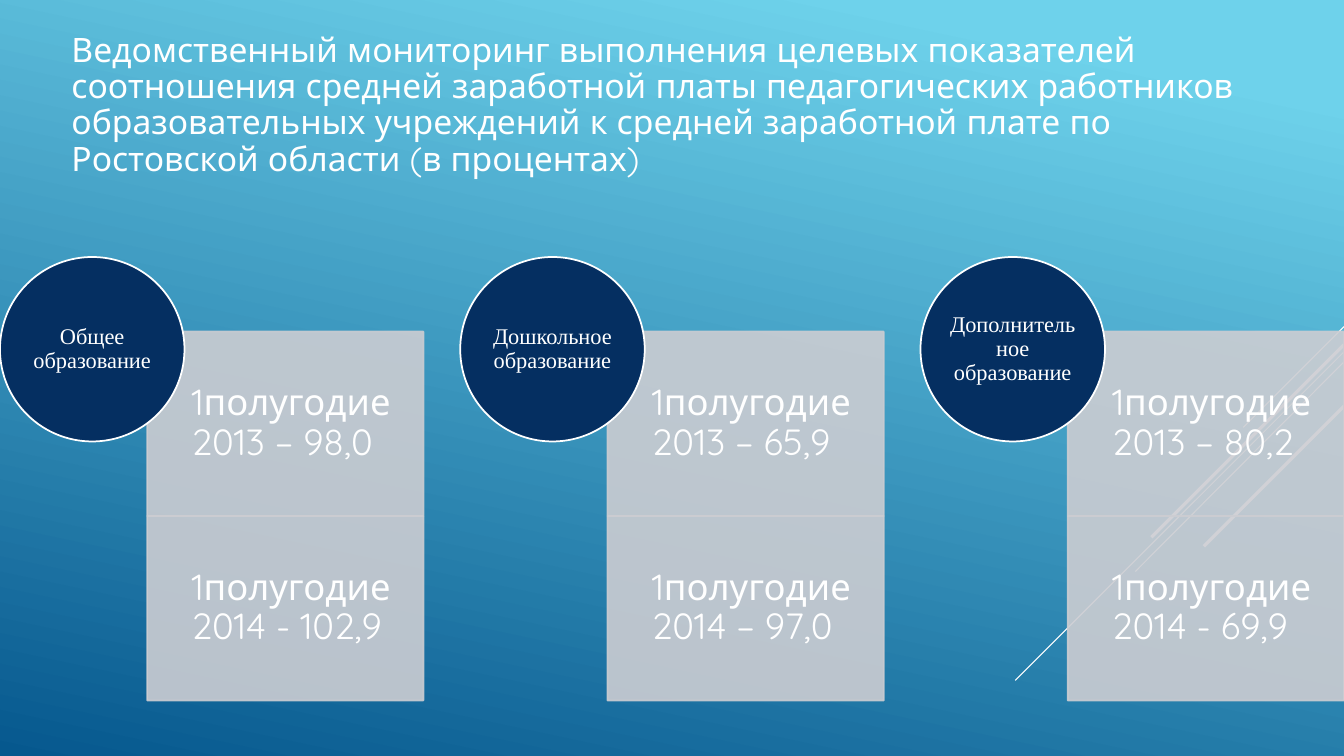
import pptx
import pptx.dml.color
import pptx.enum.shapes
import pptx.enum.text
import pptx.util
from lxml import etree
from pptx.oxml.ns import qn

Inches = pptx.util.Inches
Pt = pptx.util.Pt
SHAPES = pptx.enum.shapes.MSO_SHAPE
ALIGN = pptx.enum.text.PP_ALIGN
ANCHOR = pptx.enum.text.MSO_ANCHOR

# Content
HEADING = ("Ведомственный мониторинг выполнения целевых показателей "
           "соотношения средней заработной платы педагогических работников "
           "образовательных учреждений к средней заработной плате "
           "по Ростовской области (в процентах)")
SECTORS = [
    ("Общее образование",
     ["1полугодие 2013 – 98,0", "1полугодие 2014 - 102,9"]),
    ("Дошкольное образование",
     ["1полугодие 2013 – 65,9", "1полугодие 2014 – 97,0"]),
    ("Дополнительное образование",
     ["1полугодие 2013 – 80,2", "1полугодие 2014 - 69,9"]),
]
# Diagonal rays from the right edge: start y, end x, end y, width
RAYS = [
    (3.24, 12.33, 4.24, 0.75),
    (3.49, 10.07, 6.75, 0.75),
    (3.59, 11.26, 5.67, 0.75),
    (3.42, 11.42, 5.33, 2.25),
    (4.03, 11.94, 5.42, 2.25),
]

THEME = {
    "sky": "6ED2EB", "deep": "06588E", "white": "FFFFFF",
    "panel": "CCCDD2", "badge": "052F61",
    "panel_opacity": 90, "outline": 1.25,
    "heading": {"name": "Quicksand", "size": Pt(24)},
    "value": {"name": "Quicksand", "size": Pt(26)},
    "label": {"name": "Times New Roman", "size": Pt(16)},
}

# Layout
SLIDE_W, SLIDE_H = 13.33, 7.5
SECTOR_STEP = 4.565
BADGE_TOP, BADGE_SIZE = 2.55, 1.83
PANEL_OFFSET, PANEL_TOP, PANEL_W, PANEL_H = 1.46, 3.29, 2.74, 1.83


def rgb(key):
    return pptx.dml.color.RGBColor.from_string(THEME[key])


def set_opacity(fill_parent, percent):
    colour = fill_parent.find(qn("a:solidFill"))[0]
    etree.SubElement(colour, qn("a:alpha"), val=str(percent * 1000))


def write(holder, text, style, insets, align, anchor):
    frame = holder.text_frame
    left, top, right, bottom = map(Inches, insets)
    frame_format = {
        "word_wrap": True, "vertical_anchor": anchor, "margin_left": left,
        "margin_top": top, "margin_right": right, "margin_bottom": bottom,
    }
    for name, value in frame_format.items():
        setattr(frame, name, value)
    paragraph = frame.paragraphs[0]
    paragraph.alignment = align
    paragraph.line_spacing = 0.9
    run = paragraph.add_run()
    run.text = text
    for name, value in THEME[style].items():
        setattr(run.font, name, value)
    run.font.color.rgb = rgb("white")


def add_block(slide, kind, box, fill, line):
    block = slide.shapes.add_shape(kind, *map(Inches, box))
    block.shadow.inherit = False
    block.fill.solid()
    block.fill.fore_color.rgb = rgb(fill)
    block.line.color.rgb = rgb(line)
    block.line.width = Pt(THEME["outline"])
    return block


def add_background(slide):
    fill = slide.background.fill
    fill.gradient()
    fill.gradient_angle = 360 - 102
    for stop, position, key in zip(fill.gradient_stops, (0.1, 1), ("sky", "deep")):
        stop.position = position
        stop.color.rgb = rgb(key)


def add_rays(slide):
    for start_y, end_x, end_y, width in RAYS:
        ray = slide.shapes.add_connector(
            pptx.enum.shapes.MSO_CONNECTOR.STRAIGHT,
            *map(Inches, (SLIDE_W, start_y, end_x, end_y)))
        ray.line.color.rgb = rgb("white")
        ray.line.width = Pt(width)
        etree.SubElement(ray.element.spPr, qn("a:effectLst"))


def add_sector(slide, left, label, values):
    # Value panels, stacked
    for row, value in enumerate(values):
        box = (left + PANEL_OFFSET, PANEL_TOP + row * PANEL_H, PANEL_W, PANEL_H)
        panel = add_block(slide, SHAPES.RECTANGLE, box, "panel", "panel")
        properties = panel.element.spPr
        for parent in (properties, properties.find(qn("a:ln"))):
            set_opacity(parent, THEME["panel_opacity"])
        write(panel, value, "value", (0.44, 0.2, 0.2, 0.2), ALIGN.LEFT, ANCHOR.MIDDLE)
    # Round badge over the panel corner
    box = (left, BADGE_TOP, BADGE_SIZE, BADGE_SIZE)
    badge = add_block(slide, SHAPES.OVAL, box, "badge", "white")
    write(badge, label, "label", (0, 0, 0, 0), ALIGN.CENTER, ANCHOR.MIDDLE)


def main():
    deck = pptx.Presentation()
    deck.slide_width, deck.slide_height = Inches(SLIDE_W), Inches(SLIDE_H)
    slide = deck.slides.add_slide(deck.slide_layouts[6])
    add_background(slide)
    add_rays(slide)
    # Heading
    heading = slide.shapes.add_textbox(*map(Inches, (0.61, 0.28, 12.01, 1.72)))
    write(heading, HEADING, "heading", (0.1, 0.05, 0.1, 0.05), ALIGN.LEFT, ANCHOR.TOP)
    # Sectors
    for column, (label, values) in enumerate(SECTORS):
        add_sector(slide, column * SECTOR_STEP, label, values)
    deck.save("out.pptx")


if __name__ == "__main__":
    main()
